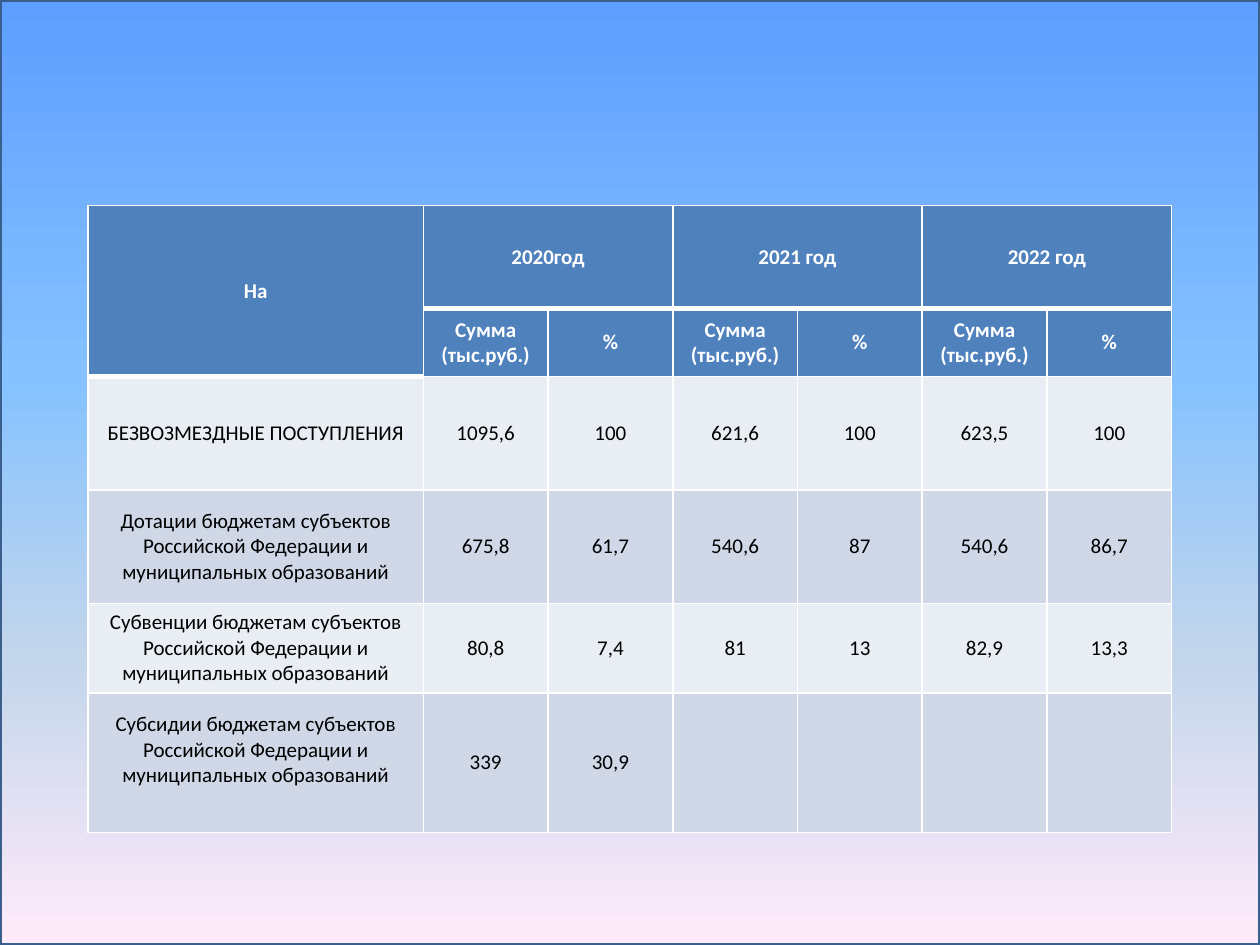
from pptx import Presentation
from pptx import util as u
from pptx.dml.color import RGBColor
from pptx.enum import shapes, text
from pptx.oxml import parse_xml
from pptx.oxml.ns import nsdecls

YEARS = ["2020год", "2021 год", "2022 год"]
MEASURES = ["Сумма (тыс.руб.)", "%"]
SUBJECTS = "бюджетам субъектов Российской Федерации и муниципальных образований"
RECEIPTS = [
    ["БЕЗВОЗМЕЗДНЫЕ ПОСТУПЛЕНИЯ", "1095,6", "100", "621,6", "100", "623,5", "100"],
    [f"Дотации {SUBJECTS}", "675,8", "61,7", "540,6", "87", "540,6", "86,7"],
    [f"Субвенции {SUBJECTS}", "80,8", "7,4", "81", "13", "82,9", "13,3"],
    [f"Субсидии {SUBJECTS}", "339", "30,9", "", "", "", ""],
]
HEADINGS = [
    ["На"] + [name for year in YEARS for name in (year, "")],
    [""] + MEASURES * len(YEARS),
]
ROWS = HEADINGS + RECEIPTS

WIDTH, HEIGHT = 10, 7.5
LEFT, TOP = 0.7, 1.63
COLUMN_WIDTHS = [2.66] + [0.99] * len(YEARS) * len(MEASURES)
ROW_HEIGHTS = [0.82, 0.54, 0.9, 0.9, 0.71, 1.11]

SKY = [(0, "5E9EFF"), (40, "85C2FF"), (70, "C4D6EB"), (100, "FFEBFA")]
FRAME = "3A5F8C"
HEADING_FILL, BAND_FILLS = "4F81BD", ["E9EDF4", "D0D8E8"]
WHITE, BLACK = "FFFFFF", "000000"


def color(value):
    return RGBColor.from_string(value)


def apply(target, values):
    for name, value in values.items():
        setattr(target, name, value)


def add_background(page):
    box = page.shapes.add_shape(
        shapes.MSO_SHAPE.RECTANGLE, 0, 0, u.Inches(WIDTH), u.Inches(HEIGHT))
    box.shadow.inherit = False
    box.line.color.rgb = color(FRAME)
    box.line.width = u.Pt(2)
    stops = "".join(
        f'<a:gs pos="{share * 1000}"><a:srgbClr val="{tone}"/></a:gs>'
        for share, tone in SKY)
    gradient = parse_xml(
        f'<a:gradFill {nsdecls("a")} rotWithShape="1"><a:gsLst>{stops}</a:gsLst>'
        '<a:lin ang="5400000" scaled="0"/></a:gradFill>')
    box._element.spPr.find("{*}prstGeom").addnext(gradient)


def add_borders(cell, row, column):
    """Draw thin white edges, with thick ones under the top headings."""
    thick_top = row == 1 or (row, column) == (2, 0)
    widths = {"L": 1, "R": 1, "T": 3 if thick_top else 1, "B": 3 if row == 0 else 1}
    properties = cell._tc.get_or_add_tcPr()
    for side, width in widths.items():
        properties.append(parse_xml(
            f'<a:ln{side} {nsdecls("a")} w="{u.Pt(width)}"><a:solidFill>'
            f'<a:srgbClr val="{WHITE}"/></a:solidFill></a:ln{side}>'))


def fill_cell(cell, content, row, column):
    heading = row < len(HEADINGS)
    add_borders(cell, row, column)
    cell.fill.solid()
    cell.fill.fore_color.rgb = color(HEADING_FILL if heading else BAND_FILLS[row % 2])
    cell.vertical_anchor = text.MSO_ANCHOR.MIDDLE
    para = cell.text_frame.paragraphs[0]
    para.alignment = text.PP_ALIGN.CENTER
    font = para.font
    if content:
        span = para.add_run()
        span.text = content
        font = span.font
    apply(font, {"name": "Calibri", "size": u.Pt(12), "bold": heading})
    font.color.rgb = color(WHITE if heading else BLACK)


def add_receipts_table(page):
    frame = page.shapes.add_table(
        len(ROWS), len(COLUMN_WIDTHS), u.Inches(LEFT), u.Inches(TOP),
        u.Inches(sum(COLUMN_WIDTHS)), u.Inches(sum(ROW_HEIGHTS)))
    table = frame.table
    for column, width in zip(table.columns, COLUMN_WIDTHS):
        column.width = u.Inches(width)
    for row, height in zip(table.rows, ROW_HEIGHTS):
        row.height = u.Inches(height)
    for row, contents in enumerate(ROWS):
        for column, content in enumerate(contents):
            fill_cell(table.cell(row, column), content, row, column)
    table.cell(0, 0).merge(table.cell(1, 0))
    for column in range(1, len(COLUMN_WIDTHS), len(MEASURES)):
        table.cell(0, column).merge(table.cell(0, column + len(MEASURES) - 1))
    table.cell(len(ROWS) - 1, 0).margin_bottom = u.Inches(0.25)


def main():
    deck = Presentation()
    apply(deck, {"slide_width": u.Inches(WIDTH), "slide_height": u.Inches(HEIGHT)})
    page = deck.slides.add_slide(deck.slide_layouts.get_by_name("Blank"))
    add_background(page)
    add_receipts_table(page)
    deck.save("out.pptx")


if __name__ == "__main__":
    main()
